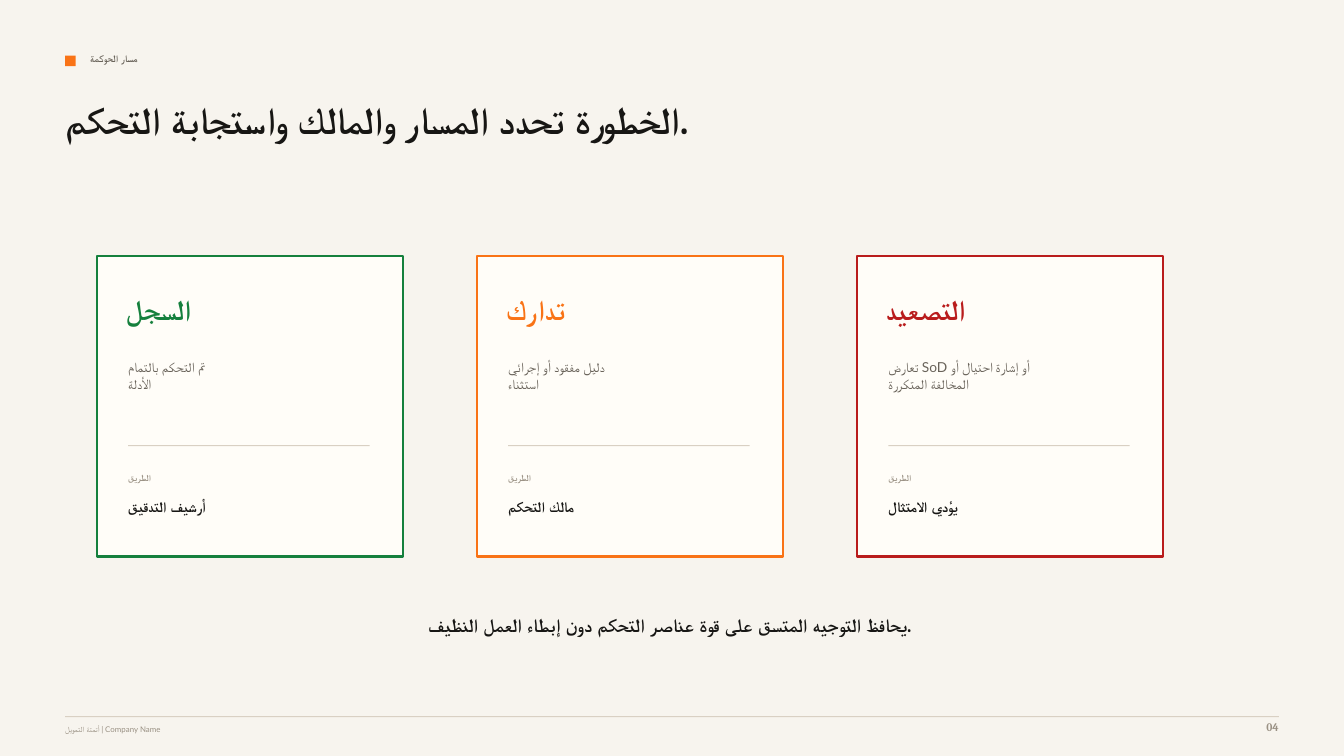
from dataclasses import dataclass

from pptx import Presentation
from pptx.dml.color import RGBColor
from pptx.enum.shapes import MSO_SHAPE
from pptx.enum.text import MSO_ANCHOR, MSO_AUTO_SIZE, PP_ALIGN
from pptx.shapes.autoshape import Shape
from pptx.slide import Slide
from pptx.util import Emu, Pt

PX = 9525
RECT = MSO_SHAPE.RECTANGLE
TOP = MSO_ANCHOR.TOP
NO_FIT = MSO_AUTO_SIZE.NONE
LEFT, CENTER, RIGHT = PP_ALIGN.LEFT, PP_ALIGN.CENTER, PP_ALIGN.RIGHT

COLORS = {
    "paper": "F7F4EE",
    "card": "FFFDF8",
    "ink": "171614",
    "body": "69635A",
    "muted": "9A9184",
    "rule": "D9D0C3",
    "green": "15803D",
    "orange": "F97316",
    "red": "B91C1C",
}


@dataclass(frozen=True)
class Box:
    x: int
    y: int
    w: int
    h: int


@dataclass(frozen=True)
class Style:
    font: str
    size: float
    color: str
    bold: bool = True
    align: PP_ALIGN = LEFT


@dataclass(frozen=True)
class Route:
    name: str
    color: str
    criteria: tuple[str, ...]
    owner: str


ROUTES = (
    Route("السجل", "green", ("تم التحكم بالتمام", "الأدلة"), "أرشيف التدقيق"),
    Route("تدارك", "orange", ("دليل مفقود أو إجرائي", "استثناء"), "مالك التحكم"),
    Route("التصعيد", "red", ("تعارض SoD أو إشارة احتيال أو", "المخالفة المتكررة"), "يؤدي الامتثال"),
)
CARD_X, CARD_Y, CARD_W, CARD_H, CARD_PITCH = 92, 244, 292, 286, 362


def rgb(name: str) -> RGBColor:
    return RGBColor.from_string(COLORS[name])


def place(sp: Shape, box: Box) -> None:
    sp.left, sp.top = Emu(box.x * PX), Emu(box.y * PX)
    sp.width, sp.height = Emu(box.w * PX), Emu(box.h * PX)


def write(sp: Shape, lines: tuple[str, ...], style: Style) -> None:
    tf = sp.text_frame
    tf.margin_left = tf.margin_top = tf.margin_right = tf.margin_bottom = 0
    tf.word_wrap = True
    tf.auto_size = NO_FIT
    tf.vertical_anchor = TOP
    tf.text = "\n".join(lines)
    for p in tf.paragraphs:
        p.alignment = style.align
        p.font.name = style.font
        p.font.size = Pt(style.size)
        p.font.bold = style.bold
        p.font.color.rgb = rgb(style.color)


def add_text(s: Slide, box: Box, style: Style, *lines: str) -> None:
    sp = s.shapes.add_textbox(0, 0, 0, 0)
    place(sp, box)
    write(sp, lines, style)


def add_rect(s: Slide, box: Box, fill: str, line: str = "") -> None:
    sp = s.shapes.add_shape(RECT, 0, 0, 0, 0)
    place(sp, box)
    sp.shadow.inherit = False
    sp.fill.solid()
    sp.fill.fore_color.rgb = rgb(fill)
    if line:
        sp.line.color.rgb = rgb(line)
        sp.line.width = Pt(1.5)
    else:
        sp.line.fill.background()


def add_card(s: Slide, x: int, route: Route) -> None:
    add_rect(s, Box(x, CARD_Y, CARD_W, CARD_H), "card", route.color)
    add_text(s, Box(x + 28, 278, 220, 34), Style("Cambria", 20.2, route.color), route.name)
    inner = x + 30
    add_text(s, Box(inner, 342, 224, 50), Style("Lato", 9.8, "body", bold=False), *route.criteria)
    add_rect(s, Box(inner, 424, 230, 1), "rule")
    add_text(s, Box(inner, 450, 160, 14), Style("Lato", 6.4, "muted"), "الطريق")
    add_text(s, Box(inner, 474, 220, 22), Style("Lato", 10.5, "ink"), route.owner)


def main() -> None:
    """Build the governance routing slide."""
    prs = Presentation()
    prs.slide_width, prs.slide_height = Emu(1280 * PX), Emu(720 * PX)
    s = prs.slides.add_slide(prs.slide_layouts[5])
    s.background.fill.solid()
    s.background.fill.fore_color.rgb = rgb("paper")

    title = s.shapes.title
    place(title, Box(62, 92, 900, 98))
    write(title, ("الخطورة تحدد المسار والمالك واستجابة التحكم.",), Style("Cambria", 27, "ink"))

    add_rect(s, Box(62, 53, 10, 10), "orange")
    add_text(s, Box(86, 50, 560, 18), Style("Lato", 7.1, "body"), "مسار الحوكمة")

    for i, route in enumerate(ROUTES):
        add_card(s, CARD_X + i * CARD_PITCH, route)

    add_text(s, Box(178, 584, 920, 28), Style("Cambria", 13.5, "ink", align=CENTER),
             "يحافظ التوجيه المتسق على قوة عناصر التحكم دون إبطاء العمل النظيف.")

    add_rect(s, Box(62, 682, 1156, 1), "rule")
    add_text(s, Box(62, 690, 760, 14), Style("Lato", 5.6, "muted", bold=False),
             "أتمتة التمويل | Company Name")
    add_text(s, Box(1170, 686, 48, 18), Style("Cambria", 8.2, "muted", align=RIGHT), "04")
    prs.save("out.pptx")


if __name__ == "__main__":
    main()
